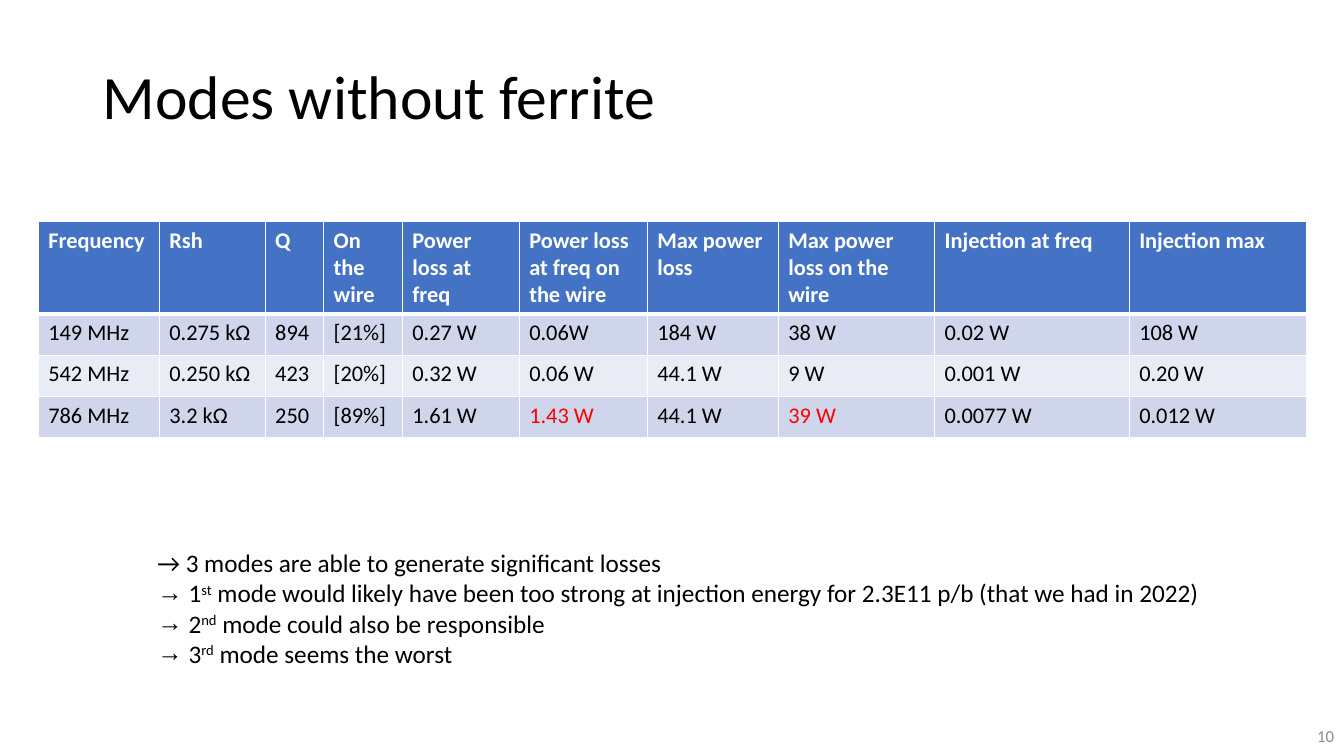
from lxml import etree
from pptx import Presentation
from pptx.dml.color import RGBColor
from pptx.enum.text import MSO_ANCHOR, MSO_AUTO_SIZE, PP_ALIGN
from pptx.oxml.ns import qn
from pptx.util import Inches, Pt

MIDDLE, TOP = MSO_ANCHOR.MIDDLE, MSO_ANCHOR.TOP
LEFT, RIGHT = PP_ALIGN.LEFT, PP_ALIGN.RIGHT
NO_FIT = MSO_AUTO_SIZE.NONE

THEME = {
    "font": "Calibri",
    "title_size": 44, "list_size": 18, "table_size": 16, "number_size": 12,
    "ink": "000000", "white": "FFFFFF", "alert": "FF0000", "grey": "8C8C8C",
    "header": "4472C4", "bands": ("CFD5EA", "E9EBF5"),
}

COLUMN_WIDTHS = [1.2, 1.05, 0.58, 0.78, 1.16, 1.27, 1.3, 1.55, 1.93, 1.76]
HEADER_HEIGHT, ROW_HEIGHT = 0.9, 0.41
MODES = [
    ["Frequency", "Rsh", "Q", "On the wire", "Power loss at freq",
     "Power loss at freq on the wire", "Max power loss",
     "Max power loss on the wire", "Injection at freq", "Injection max"],
    ["149 MHz", "0.275 kΩ", "894", "[21%]", "0.27 W",
     "0.06W", "184 W", "38 W", "0.02 W", "108 W"],
    ["542 MHz", "0.250 kΩ", "423", "[20%]", "0.32 W",
     "0.06 W", "44.1 W", "9 W", "0.001 W", "0.20 W"],
    ["786 MHz", "3.2 kΩ", "250", "[89%]", "1.61 W",
     "1.43 W", "44.1 W", "39 W", "0.0077 W", "0.012 W"],
]
ALERT_CELLS = {(3, 5), (3, 7)}

SUMMARY = "→ 3 modes are able to generate significant losses"
FINDINGS = [
    ("1", "st", " mode would likely have been too strong at injection energy"
                " for 2.3E11 p/b (that we had in 2022)"),
    ("2", "nd", " mode could also be responsible"),
    ("3", "rd", " mode seems the worst"),
]


def add_span(para, text, size, color, bold=False):
    span = para.add_run()
    span.text = text
    span.font.name = THEME["font"]
    span.font.size = Pt(size)
    span.font.bold = bold
    span.font.color.rgb = RGBColor.from_string(color)
    return span


def place(box, left, top, width, height, anchor):
    """Move a text shape, in inches, and fix how its text sits."""
    box.left, box.top = Inches(left), Inches(top)
    box.width, box.height = Inches(width), Inches(height)
    frame = box.text_frame
    frame.word_wrap = True
    frame.auto_size = NO_FIT
    frame.vertical_anchor = anchor
    return frame


deck = Presentation()
deck.slide_width, deck.slide_height = Inches(13.33), Inches(7.5)
page = deck.slides.add_slide(deck.slide_layouts[1])

# Title
title = place(page.shapes.title, 0.92, 0.4, 11.5, 1.18, MIDDLE)
para = title.paragraphs[0]
para.alignment = LEFT
para.line_spacing = 0.9
add_span(para, "Modes without ferrite", THEME["title_size"], THEME["ink"])

# Table of modes
table_height = HEADER_HEIGHT + ROW_HEIGHT * (len(MODES) - 1)
table = page.shapes.add_table(
    len(MODES), len(COLUMN_WIDTHS), Inches(0.38), Inches(2.2),
    Inches(sum(COLUMN_WIDTHS)), Inches(table_height)).table
for column, width in zip(table.columns, COLUMN_WIDTHS):
    column.width = Inches(width)

for row, values in enumerate(MODES):
    is_header = row == 0
    table.rows[row].height = Inches(HEADER_HEIGHT if is_header else ROW_HEIGHT)
    fill = THEME["header"] if is_header else THEME["bands"][(row - 1) % 2]
    borders = {"lnL": 1, "lnR": 1, "lnT": 3 if row == 1 else 1,
               "lnB": 3 if is_header else 1}
    for col, value in enumerate(values):
        cell = table.cell(row, col)
        properties = cell._tc.get_or_add_tcPr()
        for side, points in borders.items():
            line = etree.SubElement(properties, qn(f"a:{side}"), w=str(Pt(points)))
            paint = etree.SubElement(line, qn("a:solidFill"))
            etree.SubElement(paint, qn("a:srgbClr"), val=THEME["white"])
        cell.fill.solid()
        cell.fill.fore_color.rgb = RGBColor.from_string(fill)
        color = THEME["white"] if is_header else THEME["ink"]
        if (row, col) in ALERT_CELLS:
            color = THEME["alert"]
        add_span(cell.text_frame.paragraphs[0], value, THEME["table_size"],
                 color, is_header)

# Findings
findings = place(page.placeholders[1], 1.46, 5.38, 10.68, 1.31, TOP)
para = findings.paragraphs[0]
para.space_before = Pt(0)
properties = para._p.get_or_add_pPr()
properties.set("marL", "0")
properties.set("indent", "0")
etree.SubElement(properties, qn("a:buNone"))
add_span(para, SUMMARY, THEME["list_size"], THEME["ink"])

for number, suffix, statement in FINDINGS:
    para = findings.add_paragraph()
    para.space_before = Pt(0)
    properties = para._p.get_or_add_pPr()
    properties.set("marL", str(Inches(0.31)))
    properties.set("indent", str(-Inches(0.31)))
    etree.SubElement(properties, qn("a:buChar"), char="→")
    for text in (number, suffix, statement):
        span = add_span(para, text, THEME["list_size"], THEME["ink"])
        if text == suffix:
            span._r.get_or_add_rPr().set("baseline", "30000")

# Page number
number_box = page.shapes.add_textbox(0, 0, 0, 0)
para = place(number_box, 10.33, 7.1, 3, 0.4, MIDDLE).paragraphs[0]
para.alignment = RIGHT
add_span(para, "10", THEME["number_size"], THEME["grey"])

deck.save("out.pptx")
